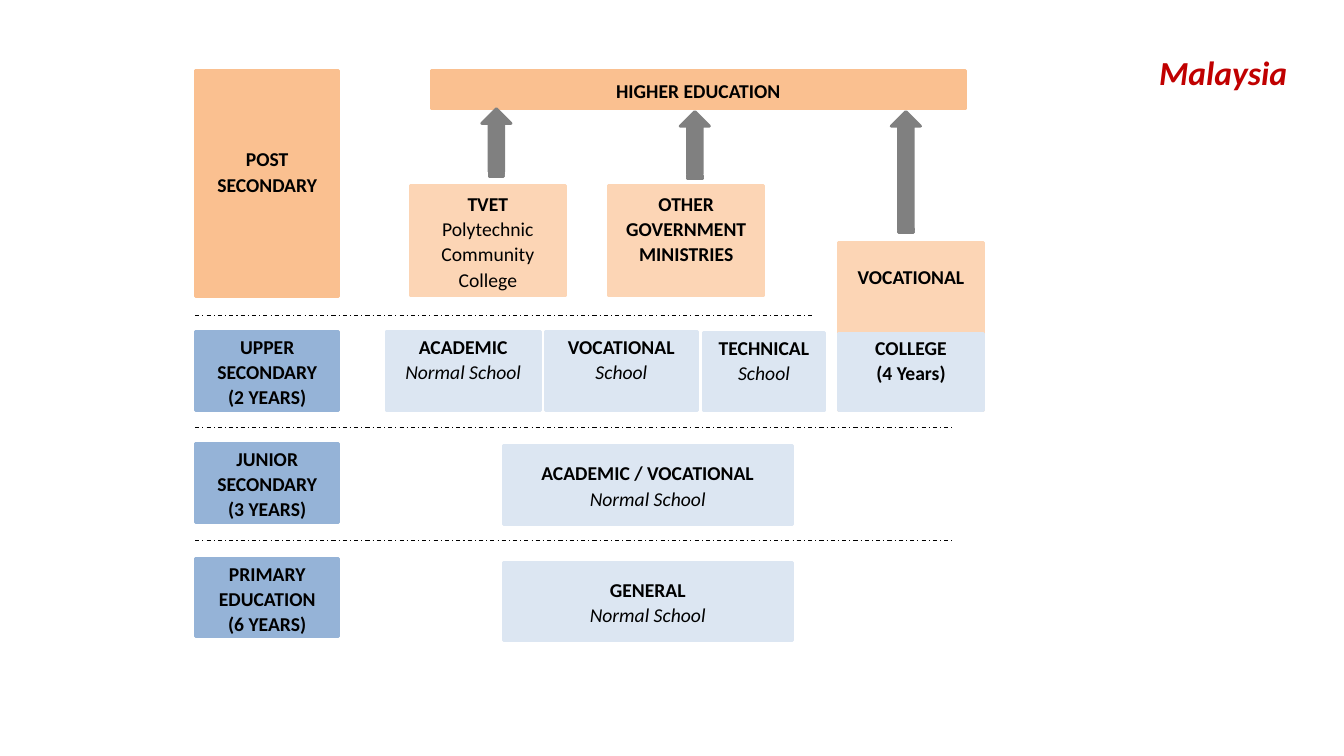
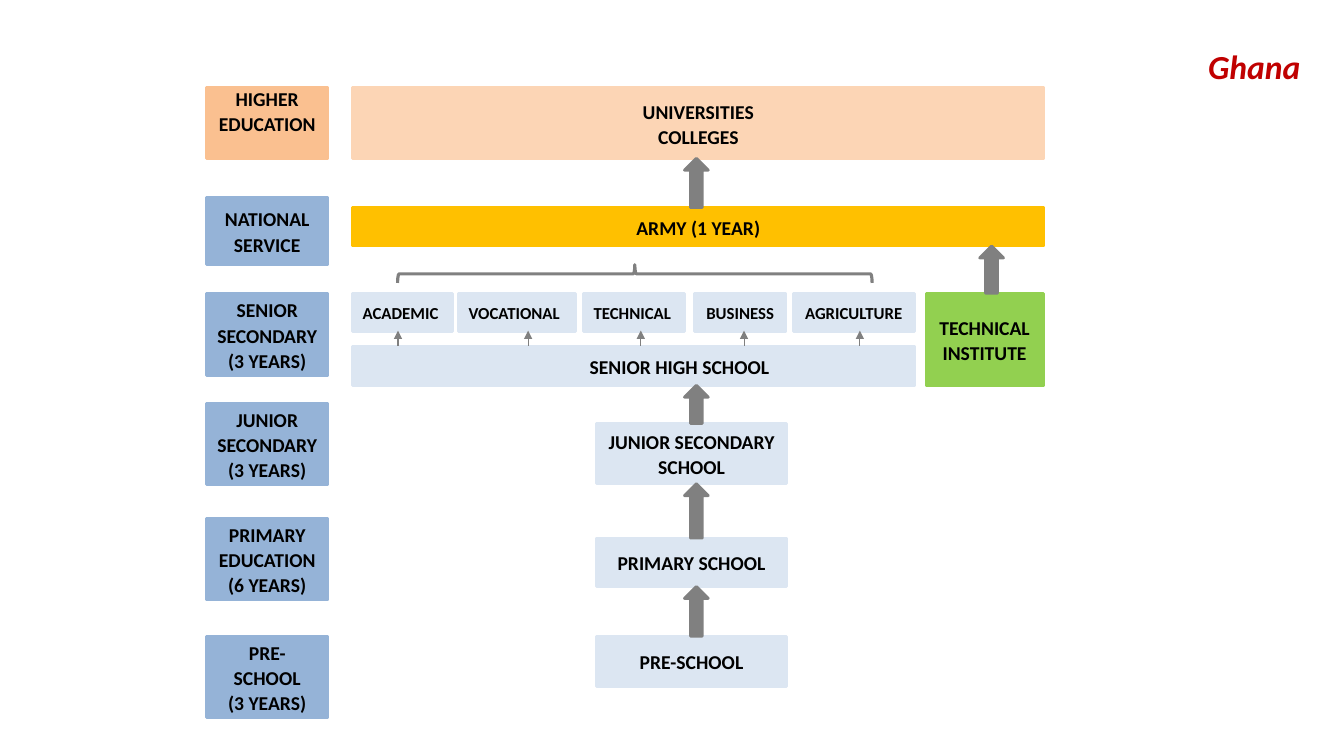
from dataclasses import dataclass

from lxml import etree
from pptx import Presentation
from pptx import util as u
from pptx.dml.color import RGBColor
from pptx.enum import dml, shapes, text
from pptx.oxml.ns import qn

FONT = "Calibri"
WHITE, BLACK, RED, GREY = "FFFFFF", "000000", "C00000", "808080"
BLUE, PALE_BLUE = "95B3D7", "DCE6F2"
ORANGE, PALE_ORANGE = "FAC090", "FCD5B5"
GOLD, GREEN = "FFC000", "92D050"
LINE_PITCH = 0.64
SIDE_MARGIN = 0.25
SHAPE = shapes.MSO_SHAPE
ALIGN = text.PP_ALIGN


@dataclass
class Box:
    """A rectangle in centimetres."""
    left: float
    top: float
    width: float
    height: float

    def inside(self, dx, dy, width, height):
        """Return a box placed relative to this one."""
        return Box(self.left + dx, self.top + dy, width, height)

    def turned(self):
        """Return the box whose quarter turn covers this one."""
        shift = (self.width - self.height) / 2
        return Box(self.left + shift, self.top - shift, self.height, self.width)

    def lengths(self):
        """Return left, top, width and height as lengths."""
        return [u.Cm(n) for n in (self.left, self.top, self.width, self.height)]

    @property
    def bottom(self):
        """Return the lower edge."""
        return self.top + self.height


def color(hex_value):
    """Turn a hex string into a colour."""
    return RGBColor.from_string(hex_value)


def add_figure(slide, kind, box, fill, line=None, width=2):
    """Draw a flat preset shape, unfilled when fill is None."""
    figure = slide.shapes.add_shape(kind, *box.lengths())
    figure.shadow.inherit = False
    if fill:
        figure.fill.solid()
        figure.fill.fore_color.rgb = color(fill)
    else:
        figure.fill.background()
    figure.line.color.rgb = color(line or fill)
    figure.line.width = u.Pt(width)
    return figure


def style_run(run, size, hex_value, bold, italic):
    """Set the look of one run."""
    font = run.font
    font.name, font.size = FONT, u.Pt(size)
    font.bold, font.italic = bold, italic
    font.color.rgb = color(hex_value)


def add_card(slide, box, fill, head, body="", italic=True, size=14,
             align=ALIGN.CENTER, lift=0, indent=0):
    """Draw a box with bold heading lines and lighter lines below, raised by lift lines."""
    frame = add_figure(slide, SHAPE.RECTANGLE, box, fill).text_frame
    frame.word_wrap = True
    frame.vertical_anchor = text.MSO_ANCHOR.MIDDLE
    frame.margin_left = u.Cm(SIDE_MARGIN + indent)
    frame.margin_right = u.Cm(SIDE_MARGIN)
    frame.margin_top = 0
    frame.margin_bottom = u.Cm(2 * lift * LINE_PITCH)
    frame.text = f"{head}\n{body}" if body else head
    head_count = head.count("\n") + 1
    for index, paragraph in enumerate(frame.paragraphs):
        is_head = index < head_count
        paragraph.alignment = align
        paragraph.line_spacing = 1.07
        for run in paragraph.runs:
            style_run(run, size, BLACK, is_head, italic and not is_head)


def add_country(slide, box, country):
    """Write the country name at the right edge of its box."""
    frame = add_figure(slide, SHAPE.RECTANGLE, box, WHITE).text_frame
    frame.word_wrap = True
    frame.vertical_anchor = text.MSO_ANCHOR.MIDDLE
    frame.text = country
    frame.paragraphs[0].alignment = ALIGN.RIGHT
    style_run(frame.paragraphs[0].runs[0], 24, RED, True, True)


def add_line(slide, start, end, hex_value):
    """Draw a thin straight line without shadow."""
    line = slide.shapes.add_connector(
        shapes.MSO_CONNECTOR.STRAIGHT, *[u.Cm(n) for n in (*start, *end)])
    line.line.color.rgb = color(hex_value)
    line.line.width = u.Pt(0.75)
    etree.SubElement(line._element.spPr, qn("a:effectLst"))
    return line


def add_striped_arrow(slide, box):
    """Draw a striped arrow pointing up within the box."""
    arrow = add_figure(slide, SHAPE.STRIPED_RIGHT_ARROW, box.turned(), GREY)
    arrow.rotation = 270


def add_rise(slide, lower, upper, left):
    """Fill the gap between two stacked boxes with an upward arrow."""
    gap = Box(left, upper.bottom, 0.6, lower.top - upper.bottom)
    add_figure(slide, SHAPE.UP_ARROW, gap, GREY)


def add_stages(slide, column, stages):
    """Stack the stage labels down the left column."""
    for dy, height, fill, label, lift in stages:
        add_card(slide, column.inside(0, dy, column.width, height), fill, label, lift=lift)


def add_dividers(slide, area):
    """Draw the dash-dot lines between the stages."""
    widths = (15.57, area.width, area.width)
    step = area.height / (len(widths) - 1)
    for index, width in enumerate(widths):
        y = area.top + index * step
        divider = add_line(slide, (area.left, y), (area.left + width, y), BLACK)
        divider.line.dash_style = dml.MSO_LINE.DASH_DOT


def add_malaysia_paths(slide, area):
    """Draw the Malaysian schools and the routes to higher education."""
    add_card(slide, area.inside(1.14, 0, 13.46, 0.97), ORANGE, "HIGHER EDUCATION")
    add_card(slide, area.inside(0.61, 2.89, 3.91, 2.79), PALE_ORANGE, "TVET",
             "Polytechnic\nCommunity College", italic=False)
    add_card(slide, area.inside(5.61, 2.89, 3.91, 2.79), PALE_ORANGE,
             "OTHER GOVERNMENT MINISTRIES", lift=0.5)
    add_card(slide, area.inside(11.4, 4.34, 3.66, 4.22), PALE_ORANGE, "VOCATIONAL", lift=2)
    add_card(slide, area.inside(11.4, 6.63, 3.66, 1.93), PALE_BLUE,
             "COLLEGE\n(4 Years)", lift=0.5)
    for dx, dy, height in ((2.41, 0.96, 1.7), (7.41, 1.03, 1.7), (12.73, 1.03, 3.05)):
        add_striped_arrow(slide, area.inside(dx, dy, 0.74, height))
    schools = (
        (0, 6.58, 3.89, "ACADEMIC", "Normal School", 0.5),
        (4.01, 6.58, 3.84, "VOCATIONAL", "School", 0.5),
        (8, 6.6, 3.05, "TECHNICAL", "School", 0.5),
        (2.95, 9.45, 7.29, "ACADEMIC / VOCATIONAL", "Normal School", 0),
        (2.95, 12.39, 7.29, "GENERAL", "Normal School", 0),
    )
    for dx, dy, width, head, body, lift in schools:
        add_card(slide, area.inside(dx, dy, width, 1.98), PALE_BLUE, head, body, lift=lift)


def add_tracks(slide, area):
    """Draw the senior high school tracks, their arrows and the brace above them."""
    tracks = (
        (0, 2.51, 1.14, "ACADEMIC", ALIGN.LEFT),
        (2.67, 2.95, 4.42, "VOCATIONAL", ALIGN.LEFT),
        (5.82, 2.54, 7.26, "TECHNICAL", ALIGN.LEFT),
        (8.61, 2.31, 9.86, "BUSINESS", ALIGN.CENTER),
        (11.1, 3.05, 12.78, "AGRICULTURE", ALIGN.CENTER),
    )
    for dx, width, arrow_dx, track, align in tracks:
        add_card(slide, area.inside(dx, 0.72, width, 0.97), PALE_BLUE, track,
                 size=12, align=align)
        x = area.left + arrow_dx
        arrow = add_line(slide, (x, area.top + 2.04), (x, area.top + 1.66), GREY)
        etree.SubElement(arrow.line._get_or_add_ln(), qn("a:tailEnd"), type="triangle")
    brace = add_figure(slide, SHAPE.RIGHT_BRACE,
                       area.inside(1.13, 0, 11.96, 0.46).turned(), None, GREY, 2.25)
    brace.rotation = 270


def add_ghana_paths(slide, area):
    """Draw the Ghanaian schools from pre-school up to university."""
    universities = area.inside(0, 0, area.width, 1.78)
    army = area.inside(0, 3.02, area.width, 0.97)
    institute = area.inside(14.45, 5.18, 2.95, 2.34)
    senior = area.inside(0, 6.53, 14.17, 0.97)
    junior = area.inside(6.15, 8.46, 4.78, 1.52)
    primary = area.inside(6.15, 11.35, 4.78, 1.22)
    pre_school = area.inside(6.15, 13.82, 4.78, 1.27)
    levels = (
        (universities, PALE_ORANGE, "UNIVERSITIES\nCOLLEGES", 0),
        (army, GOLD, "ARMY (1 YEAR)", 0),
        (institute, GREEN, "TECHNICAL INSTITUTE", 0),
        (senior, PALE_BLUE, "SENIOR HIGH SCHOOL", 2.3),
        (junior, PALE_BLUE, "JUNIOR SECONDARY\nSCHOOL", 0),
        (primary, PALE_BLUE, "PRIMARY SCHOOL", 0),
        (pre_school, PALE_BLUE, "PRE-SCHOOL", 0),
    )
    for box, fill, label, indent in levels:
        add_card(slide, box, fill, label, indent=indent)
    add_tracks(slide, area.inside(0, 4.46, 14.17, 3.04))
    for lower, upper in ((pre_school, primary), (primary, junior),
                         (junior, senior), (army, universities)):
        add_rise(slide, lower, upper, area.left + 8.36)
    add_rise(slide, institute, army, area.left + 15.8)


def build_malaysia(slide):
    """Build the Malaysia slide."""
    add_country(slide, Box(28.88, 0.79, 3.81, 2.03), "Malaysia")
    add_stages(slide, Box(4.93, 1.78, 3.61, 14.27), (
        (0, 5.69, ORANGE, "POST SECONDARY", 0.5),
        (6.58, 1.98, BLUE, "UPPER SECONDARY\n(2 YEARS)", 0),
        (9.4, 1.98, BLUE, "JUNIOR SECONDARY\n(3 YEARS)", 0),
        (12.29, 1.98, BLUE, "PRIMARY EDUCATION\n(6 YEARS)", 0),
    ))
    add_malaysia_paths(slide, Box(9.73, 1.78, 15.06, 14.38))
    add_dividers(slide, Box(4.92, 7.95, 19.12, 5.66))


def build_ghana(slide):
    """Build the Ghana slide."""
    add_country(slide, Box(27.58, 0.66, 5.44, 2.03), "Ghana")
    add_stages(slide, Box(5.2, 2.21, 3.07, 15.88), (
        (0, 1.78, ORANGE, "HIGHER EDUCATION", 0.5),
        (2.77, 1.68, BLUE, "NATIONAL SERVICE", 0),
        (5.18, 2.08, BLUE, "SENIOR SECONDARY\n(3 YEARS)", 0),
        (7.95, 2.06, BLUE, "JUNIOR SECONDARY\n(3 YEARS)", 0),
        (10.85, 2.06, BLUE, "PRIMARY EDUCATION\n(6 YEARS)", 0),
        (13.82, 2.06, BLUE, "PRE-SCHOOL\n(3 YEARS)", 0),
    ))
    add_ghana_paths(slide, Box(8.89, 2.21, 17.42, 15.09))


def main():
    """Build and save the presentation."""
    deck = Presentation()
    deck.slide_width, deck.slide_height = u.Cm(33.87), u.Cm(19.05)
    for build in (build_malaysia, build_ghana):
        build(deck.slides.add_slide(deck.slide_layouts[6]))
    deck.save("out.pptx")


if __name__ == "__main__":
    main()
